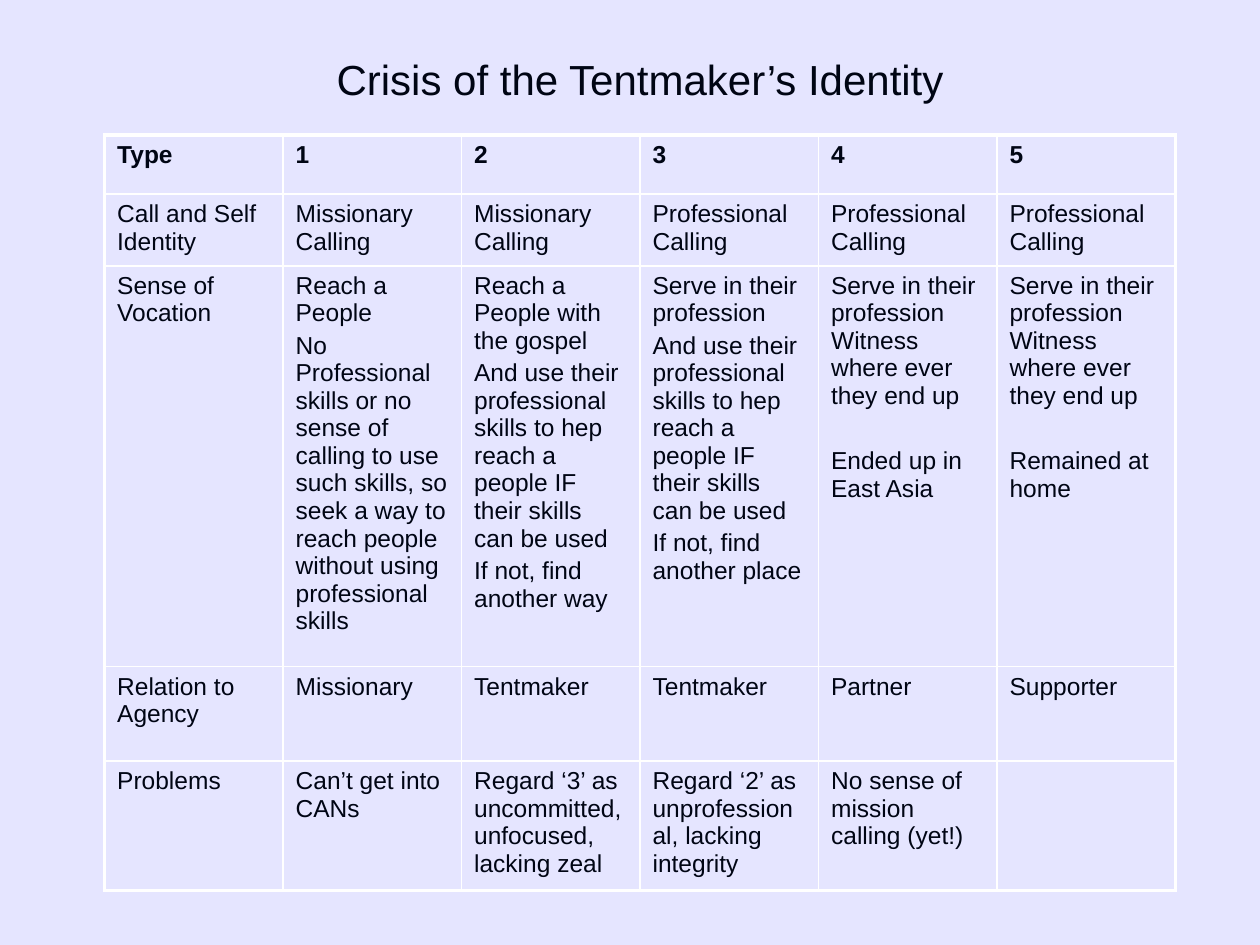
import pptx
import pptx.dml.color
import pptx.enum.text
import pptx.oxml
import pptx.oxml.ns
import pptx.util
from pptx.util import Inches, Pt

# Content: each cell is a list of paragraphs
TITLE = "Crisis of the Tentmaker’s Identity"
SKILLS = "And use their professional skills to hep reach a people IF their skills can be used"
WITNESS = "Serve in their profession Witness where ever they end up"
ROWS = [
    [["Type"], ["1"], ["2"], ["3"], ["4"], ["5"]],
    [["Call and Self Identity"], ["Missionary Calling"], ["Missionary Calling"],
     ["Professional Calling"], ["Professional Calling"], ["Professional Calling"]],
    [["Sense of Vocation"],
     ["Reach a People",
      "No Professional skills or no sense of calling to use such skills, "
      "so seek a way to reach people without using professional skills"],
     ["Reach a People with the gospel", SKILLS, "If not, find another way"],
     ["Serve in their profession", SKILLS, "If not, find another place"],
     [WITNESS, "Ended up in East Asia"],
     [WITNESS, "Remained at home"]],
    [["Relation to Agency"], ["Missionary"], ["Tentmaker"], ["Tentmaker"],
     ["Partner"], ["Supporter"]],
    [["Problems"], ["Can’t get into CANs"],
     ["Regard ‘3’ as uncommitted, unfocused, lacking zeal"],
     ["Regard ‘2’ as unprofessional, lacking integrity"],
     ["No sense of mission calling (yet!)"], []],
]
ROW_HEIGHTS = [0.47, 0.57, 3.18, 0.75, 1.03]
LEFT, WIDTH, TABLE_TOP = 0.83, 8.5, 1.07

THEME = {
    "background": pptx.dml.color.RGBColor.from_string("E5E5FF"),
    "text": pptx.dml.color.RGBColor.from_string("000514"),
    "border": "FFFFFF",
    "font": "Arial",
    "title_size": Pt(24),
    "cell_size": Pt(14),
    "paragraph_gap": Pt(2.8),
    "section_gap": Pt(21.4),
    "inner_line": Pt(1),
    "outer_line": Pt(2.25),
}


def format_font(font, size, bold=False):
    values = {"name": THEME["font"], "size": size, "bold": bold}
    for name, value in values.items():
        setattr(font, name, value)
    font.color.rgb = THEME["text"]


def set_borders(cell, outer_sides):
    """Draw the four borders, with the table's outer sides heavier."""
    properties = cell._tc.get_or_add_tcPr()
    for position, side in enumerate("LRTB"):
        width = THEME["outer_line" if outer_sides[side] else "inner_line"]
        line = pptx.oxml.parse_xml(
            f'<a:ln{side} {pptx.oxml.ns.nsdecls("a")} w="{int(width)}">'
            f'<a:solidFill><a:srgbClr val="{THEME["border"]}"/></a:solidFill>'
            f'</a:ln{side}>')
        properties.insert(position, line)


def write_cell(cell, texts, bold):
    frame = cell.text_frame
    format_font(frame.paragraphs[0].font, THEME["cell_size"], bold)
    for index, text in enumerate(texts):
        para = frame.add_paragraph() if index else frame.paragraphs[0]
        if index:
            after_witness = texts[index - 1] == WITNESS
            para.space_before = THEME["section_gap" if after_witness else "paragraph_gap"]
        span = para.add_run()
        span.text = text
        format_font(span.font, THEME["cell_size"], bold)


def add_title(page):
    box = page.shapes.title
    place = {"left": LEFT, "top": 0, "width": WIDTH, "height": 1.25}
    for name, value in place.items():
        setattr(box, name, Inches(value))
    frame = box.text_frame
    frame.text = TITLE
    frame.vertical_anchor = pptx.enum.text.MSO_ANCHOR.MIDDLE
    para = frame.paragraphs[0]
    para.alignment = pptx.enum.text.PP_ALIGN.CENTER
    format_font(para.runs[0].font, THEME["title_size"])


def add_identity_table(page):
    row_count, column_count = len(ROWS), len(ROWS[0])
    table = page.shapes.add_table(
        row_count, column_count, Inches(LEFT), Inches(TABLE_TOP),
        Inches(WIDTH), Inches(sum(ROW_HEIGHTS))).table
    table.first_row = table.horz_banding = False
    for column in table.columns:
        column.width = Inches(WIDTH / column_count)
    for row, height in zip(table.rows, ROW_HEIGHTS):
        row.height = Inches(height)

    for r, row in enumerate(ROWS):
        for c, texts in enumerate(row):
            cell = table.cell(r, c)
            cell.fill.background()
            set_borders(cell, {"L": c == 0, "R": c == column_count - 1,
                               "T": r == 0, "B": r == row_count - 1})
            write_cell(cell, texts, bold=r == 0)


def main():
    deck = pptx.Presentation()
    deck.slide_width, deck.slide_height = Inches(10), Inches(7.5)
    page = deck.slides.add_slide(deck.slide_layouts.get_by_name("Title Only"))
    page.background.fill.solid()
    page.background.fill.fore_color.rgb = THEME["background"]
    add_title(page)
    add_identity_table(page)
    deck.save("out.pptx")


if __name__ == "__main__":
    main()
